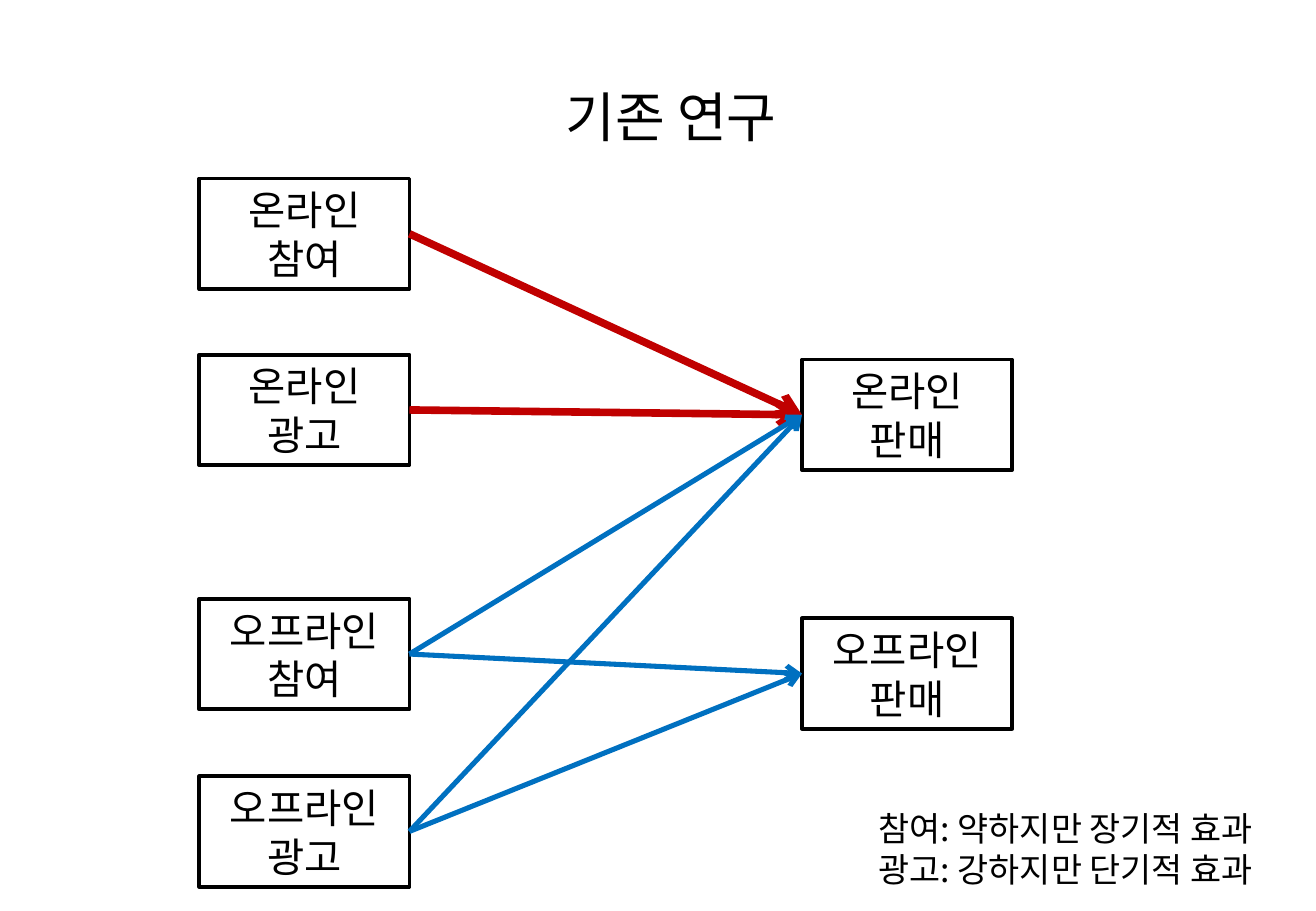
from lxml import etree
from pptx import Presentation
from pptx.dml.color import RGBColor
from pptx.enum.shapes import MSO_CONNECTOR, MSO_SHAPE
from pptx.enum.text import MSO_ANCHOR, PP_ALIGN
from pptx.oxml.ns import qn
from pptx.util import Pt

PX = 9144  # 100 px to the inch
STRAIGHT, RECTANGLE = MSO_CONNECTOR.STRAIGHT, MSO_SHAPE.RECTANGLE
MIDDLE, BOTTOM, CENTER = MSO_ANCHOR.MIDDLE, MSO_ANCHOR.BOTTOM, PP_ALIGN.CENTER
LEFT_SIDE, RIGHT_SIDE = 1, 3
FONT = "Noto Sans CJK KR"
COLORS = {"ink": "000000", "online": "C00000", "offline": "0070C0"}

# Content
TITLE = "기존 연구"
CAPTION = "참여: 약하지만 장기적 효과\n광고: 강하지만 단기적 효과"
CAUSE_LEFT, SALES_LEFT = 164, 660
BOX_WIDTH, BOX_HEIGHT = 173, 91
BOXES = {  # name: (text, left, top)
    "online sales": ("온라인 판매", SALES_LEFT, 296),
    "offline sales": ("오프라인\v판매", SALES_LEFT, 509),
    "online engagement": ("온라인 참여", CAUSE_LEFT, 147),
    "offline engagement": ("오프라인\v참여", CAUSE_LEFT, 493),
    "offline ads": ("오프라인\v광고", CAUSE_LEFT, 639),
    "online ads": ("온라인\n광고", CAUSE_LEFT, 292),
}
ARROWS = [  # cause, sales, color, width in points
    ("online engagement", "online sales", "online", 4.5),
    ("online ads", "online sales", "online", 4.5),
    ("offline engagement", "offline sales", "offline", 3),
    ("offline ads", "offline sales", "offline", 3),
    ("offline engagement", "online sales", "offline", 3),
    ("offline ads", "online sales", "offline", 3),
]


def rgb(name):
    return RGBColor.from_string(COLORS[name])


def scaled(*lengths):
    return [length * PX for length in lengths]


def write(shape, text, size, line_height=None, **frame_format):
    frame = shape.text_frame
    frame.text = text
    for name, value in {"word_wrap": True, "vertical_anchor": MIDDLE, **frame_format}.items():
        setattr(frame, name, value)
    for para in frame.paragraphs:
        para.alignment = CENTER
        if line_height:
            para.line_spacing = Pt(line_height)
        for span in para.runs:
            for name, value in {"size": Pt(size), "name": FONT, "bold": False}.items():
                setattr(span.font, name, value)
            span.font.color.rgb = rgb("ink")
            east_asian = etree.SubElement(span._r.get_or_add_rPr(), qn("a:ea"))
            east_asian.set("typeface", FONT)


def add_box(page, text, left, top):
    box = page.shapes.add_shape(RECTANGLE, *scaled(left, top, BOX_WIDTH, BOX_HEIGHT))
    box.shadow.inherit = False
    box.fill.background()
    box.line.color.rgb = rgb("ink")
    box.line.width = Pt(2.25)
    write(box, text, 24, 29)
    return box


def add_arrow(page, cause, sales, color, width):
    arrow = page.shapes.add_connector(STRAIGHT, 0, 0, 0, 0)
    arrow.begin_connect(cause, RIGHT_SIDE)
    arrow.end_connect(sales, LEFT_SIDE)
    arrow.line.color.rgb = rgb(color)
    arrow.line.width = Pt(width)
    etree.SubElement(arrow.line._get_or_add_ln(), qn("a:tailEnd")).set("type", "arrow")
    etree.SubElement(arrow._element.spPr, qn("a:effectLst"))


def main():
    deck = Presentation()
    deck.slide_width, deck.slide_height = scaled(1083, 750)
    page = deck.slides.add_slide(deck.slide_layouts[5])

    # Title
    title = page.shapes.title
    title.left, title.top, title.width, title.height = scaled(77, 68, 951, 54)
    write(title, TITLE, 32, vertical_anchor=BOTTOM, margin_left=0,
          margin_right=0, margin_top=0, margin_bottom=0)

    # Causes and sales, joined by arrows
    boxes = {name: add_box(page, *content) for name, content in BOXES.items()}
    for cause, sales, color, width in ARROWS:
        add_arrow(page, boxes[cause], boxes[sales], color, width)

    # Caption
    caption = page.shapes.add_textbox(*scaled(676, 660, 402, 77))
    write(caption, CAPTION, 20, 24)

    deck.save("out.pptx")


if __name__ == "__main__":
    main()
